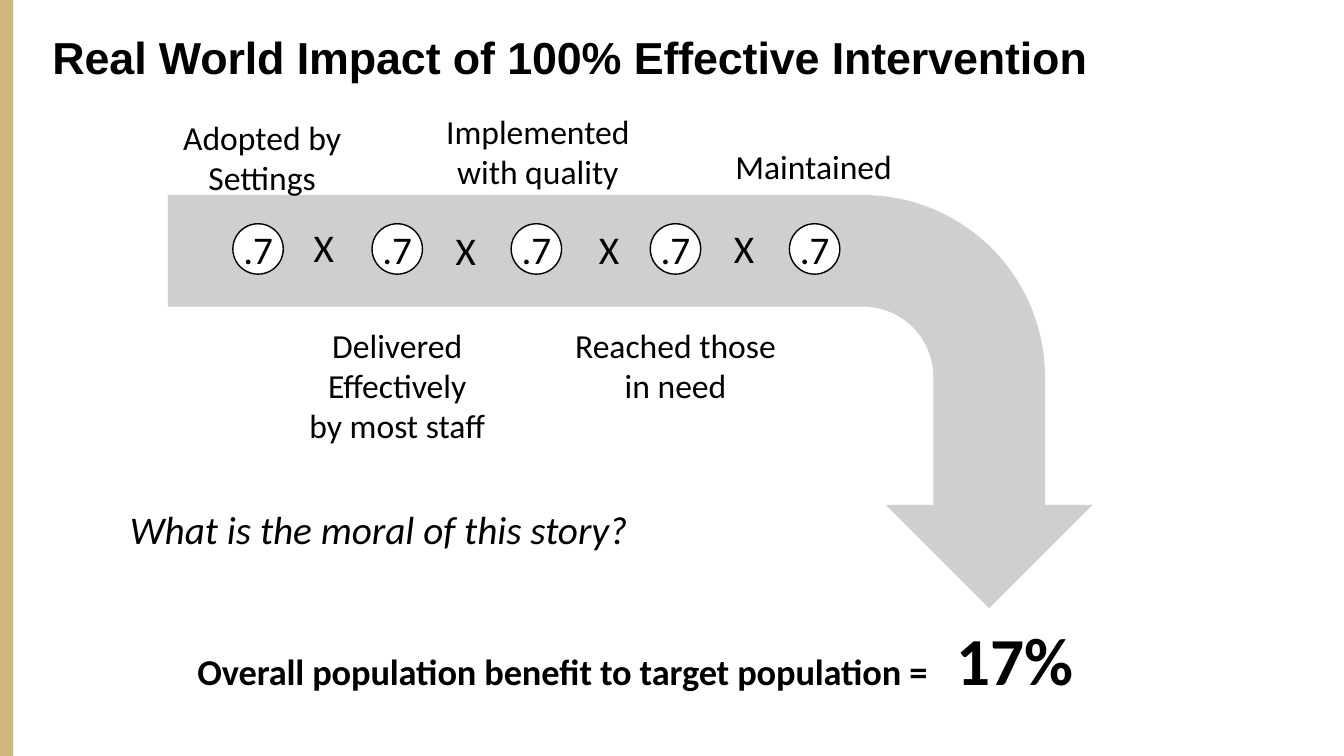
from lxml import etree
from pptx import Presentation
from pptx.dml.color import RGBColor
from pptx.enum.shapes import MSO_SHAPE
from pptx.enum.text import MSO_ANCHOR, MSO_AUTO_SIZE, PP_ALIGN
from pptx.oxml.ns import qn
from pptx.util import Pt

PX = 9144  # EMU per px, 100 px to the inch
BLACK = RGBColor(0x00, 0x00, 0x00)
WHITE = RGBColor(0xFF, 0xFF, 0xFF)
GREY = RGBColor(0xD0, 0xCE, 0xCE)
GOLD = RGBColor(0xCF, 0xB8, 0x7C)
LEFT, CENTER = PP_ALIGN.LEFT, PP_ALIGN.CENTER
MIDDLE = MSO_ANCHOR.MIDDLE
GROW = MSO_AUTO_SIZE.SHAPE_TO_FIT_TEXT
BENT_ARROW, OVAL, RECT = MSO_SHAPE.BENT_ARROW, MSO_SHAPE.OVAL, MSO_SHAPE.RECTANGLE

TITLE_ONLY = 5
FACTOR_LEFT, FACTOR_PITCH, FACTOR_COUNT = 231, 138, 5
TIMES_SIGNS = [(287, 217), (428, 220), (570, 219), (704, 218)]
STAGES = [
    ("Adopted by\nSettings", (162, 111, 196, 91)),
    ("Delivered Effectively\nby most staff", (274, 317, 240, 131)),
    ("Implemented\nwith quality", (422, 105, 223, 91)),
    ("Reached those in need", (559, 317, 222, 91)),
    ("Maintained", (696, 140, 222, 50)),
]


def emu(box):
    return [v * PX for v in box]


def add_run(p, text, size=24, font="Calibri", bold=False, italic=False, spacing=0):
    """Add a run; spacing is in hundredths of a point."""
    r = p.add_run()
    r.text = text
    r.font.name, r.font.size = font, Pt(size)
    r.font.bold, r.font.italic = bold, italic
    r.font.color.rgb = BLACK
    if spacing:
        r.font._element.set("spc", str(spacing))


def add_text(s, text, box, align=CENTER, **style):
    """Add a text box with one paragraph for each line of text."""
    tf = s.shapes.add_textbox(*emu(box)).text_frame
    tf.word_wrap = True
    tf.auto_size = GROW
    for i, line in enumerate(text.split("\n")):
        p = tf.add_paragraph() if i else tf.paragraphs[0]
        p.alignment = align
        add_run(p, line, **style)
    return tf


def add_shape(s, kind, box, fill, line=None):
    sp = s.shapes.add_shape(kind, *emu(box))
    sp.shadow.inherit = False
    sp.fill.solid()
    sp.fill.fore_color.rgb = fill
    if line is None:
        sp.line.fill.background()
    else:
        sp.line.color.rgb = line
        sp.line.width = Pt(1)
    return sp


def add_tab_stop(p, position):
    tabs = etree.SubElement(p._p.get_or_add_pPr(), qn("a:tabLst"))
    etree.SubElement(tabs, qn("a:tab"), pos=str(position * PX), algn="l")


def set_title(s, text, box):
    sp = s.shapes.title
    sp.left, sp.top, sp.width, sp.height = emu(box)
    tf = sp.text_frame
    tf.margin_left = tf.margin_right = tf.margin_bottom = 0
    tf.margin_top = PX
    tf.vertical_anchor = MIDDLE
    tf.word_wrap = True
    tf.auto_size = GROW
    p = tf.paragraphs[0]
    p.alignment = LEFT
    p.space_before = Pt(1)
    add_run(p, text, size=32, font="Arial", bold=True, spacing=-10)


def add_arrow(s):
    sp = add_shape(s, BENT_ARROW, (420, -60, 410, 917), GREY)
    sp.rotation = 90
    for i, value in enumerate((0.27, 0.25, 0.25, 0.44)):
        sp.adjustments[i] = value


def add_factors(s):
    lefts = [FACTOR_LEFT + i * FACTOR_PITCH for i in range(FACTOR_COUNT)]
    for left in lefts:
        add_shape(s, OVAL, (left, 222, 50, 50), WHITE, BLACK)
    for left in lefts:
        add_text(s, ".7", (left - 9, 219, 68, 57), size=28)
    for left, top in TIMES_SIGNS:
        add_text(s, "X", (left, top, 68, 57), size=28)


def add_result(s):
    tf = add_text(s, "Overall population benefit to target population =\t",
                  (186, 608, 937, 91), LEFT, size=26, bold=True, spacing=-10)
    p = tf.paragraphs[0]
    add_tab_stop(p, 753)
    add_run(p, "17%", size=48, bold=True, spacing=-10)


def main():
    prs = Presentation()
    prs.slide_width, prs.slide_height = emu((1333, 750))
    s = prs.slides.add_slide(prs.slide_layouts[TITLE_ONLY])
    set_title(s, "Real World Impact of 100% Effective Intervention", (52, 28, 1037, 55))
    add_arrow(s)
    add_result(s)
    for text, box in STAGES:
        add_text(s, text, box)
    add_factors(s)
    add_shape(s, RECT, (-1, 0, 14, 750), GOLD)
    add_text(s, "What is the moral of this story?", (119, 496, 623, 57), LEFT,
             size=28, italic=True)
    prs.save("out.pptx")


if __name__ == "__main__":
    main()
